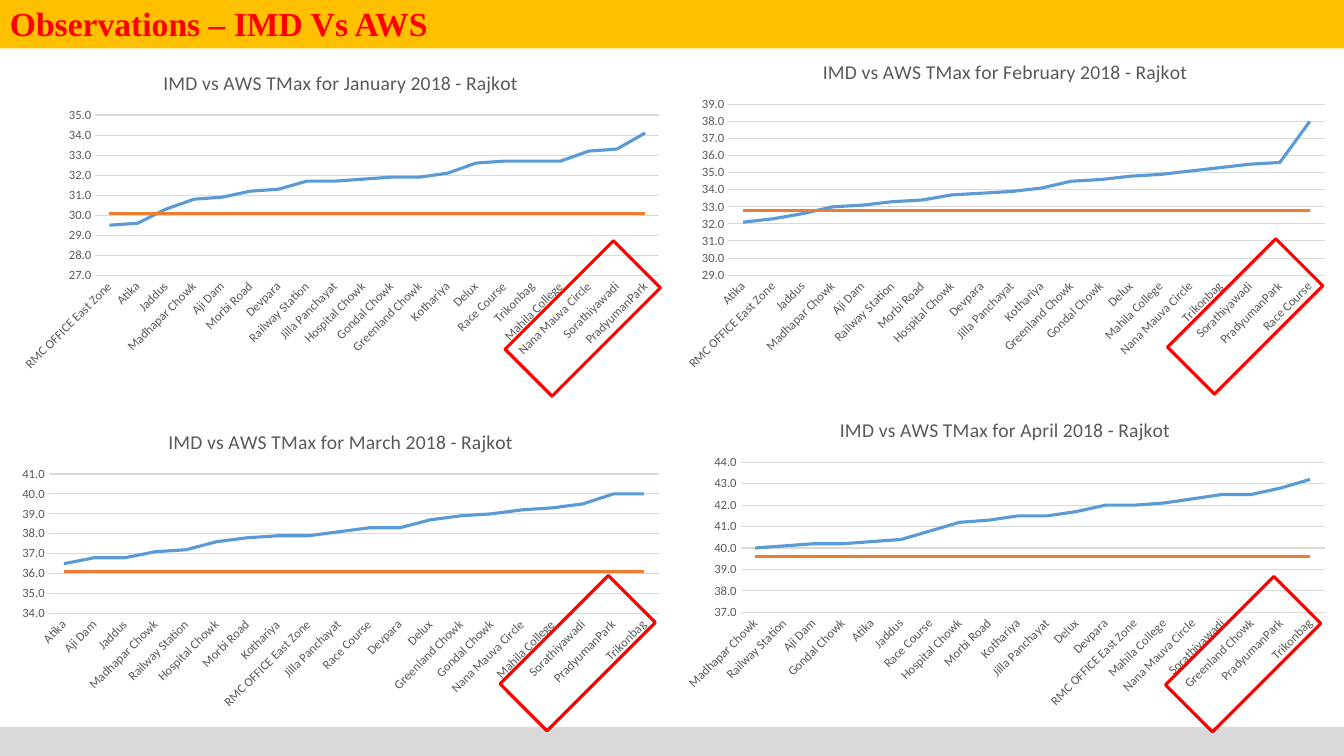
from dataclasses import dataclass

from pptx import Presentation
from pptx.chart.data import CategoryChartData
from pptx.dml.color import RGBColor
from pptx.enum.chart import XL_CHART_TYPE, XL_TICK_MARK
from pptx.enum.shapes import MSO_SHAPE
from pptx.enum.text import MSO_ANCHOR
from pptx.shapes.autoshape import Shape
from pptx.slide import Slide
from pptx.util import Inches, Pt

AMBER = RGBColor(0xFF, 0xC0, 0x00)
RED = RGBColor(0xFF, 0x00, 0x00)
LIGHT_GREY = RGBColor(0xD9, 0xD9, 0xD9)
DARK_GREY = RGBColor(0x59, 0x59, 0x59)
BLUE = RGBColor(0x5B, 0x9B, 0xD5)
ORANGE = RGBColor(0xED, 0x7D, 0x31)
WIDTH, HEIGHT = 13.33, 7.5
Box = tuple[float, float, float, float]


@dataclass
class MonthChart:
    month: str
    box: Box
    axis: tuple[int, int]
    imd: float
    aws: dict[str, float]
    highlight: tuple[float, float]


MONTHS = [
    MonthChart("January", (0.09, 0.53, 6.58, 3.22), (27, 35), 30.1, {
        "RMC OFFICE East Zone": 29.5, "Atika": 29.6, "Jaddus": 30.3,
        "Madhapar Chowk": 30.8, "Aji Dam": 30.9, "Morbi Road": 31.2,
        "Devpara": 31.3, "Railway Station": 31.7, "Jilla Panchayat": 31.7,
        "Hospital Chowk": 31.8, "Gondal Chowk": 31.9, "Greenland Chowk": 31.9,
        "Kothariya": 32.1, "Delux": 32.6, "Race Course": 32.7,
        "Trikonbag": 32.7, "Mahila College": 32.7, "Nana Mauva Circle": 33.2,
        "Sorathiyawadi": 33.3, "PradyumanPark": 34.1}, (5.45, 2.4)),
    MonthChart("February", (6.67, 0.42, 6.6, 3.33), (29, 39), 32.8, {
        "Atika": 32.1, "RMC OFFICE East Zone": 32.3, "Jaddus": 32.6,
        "Madhapar Chowk": 33.0, "Aji Dam": 33.1, "Railway Station": 33.3,
        "Morbi Road": 33.4, "Hospital Chowk": 33.7, "Devpara": 33.8,
        "Jilla Panchayat": 33.9, "Kothariya": 34.1, "Greenland Chowk": 34.5,
        "Gondal Chowk": 34.6, "Delux": 34.8, "Mahila College": 34.9,
        "Nana Mauva Circle": 35.1, "Trikonbag": 35.3, "Sorathiyawadi": 35.5,
        "PradyumanPark": 35.6, "Race Course": 38.0}, (12.02, 2.38)),
    MonthChart("March", (0.09, 4.1, 6.58, 3), (34, 41), 36.1, {
        "Atika": 36.5, "Aji Dam": 36.8, "Jaddus": 36.8,
        "Madhapar Chowk": 37.1, "Railway Station": 37.2, "Hospital Chowk": 37.6,
        "Morbi Road": 37.8, "Kothariya": 37.9, "RMC OFFICE East Zone": 37.9,
        "Jilla Panchayat": 38.1, "Race Course": 38.3, "Devpara": 38.3,
        "Delux": 38.7, "Greenland Chowk": 38.9, "Gondal Chowk": 39.0,
        "Nana Mauva Circle": 39.2, "Mahila College": 39.3,
        "Sorathiyawadi": 39.5, "PradyumanPark": 40.0, "Trikonbag": 40.0},
        (5.4, 5.72)),
    MonthChart("April", (6.67, 3.98, 6.6, 3.11), (37, 44), 39.6, {
        "Madhapar Chowk": 40.0, "Railway Station": 40.1, "Aji Dam": 40.2,
        "Gondal Chowk": 40.2, "Atika": 40.3, "Jaddus": 40.4,
        "Race Course": 40.8, "Hospital Chowk": 41.2, "Morbi Road": 41.3,
        "Kothariya": 41.5, "Jilla Panchayat": 41.5, "Delux": 41.7,
        "Devpara": 42.0, "RMC OFFICE East Zone": 42.0, "Mahila College": 42.1,
        "Nana Mauva Circle": 42.3, "Sorathiyawadi": 42.5,
        "Greenland Chowk": 42.5, "PradyumanPark": 42.8, "Trikonbag": 43.2},
        (12, 5.73)),
]


def add_rect(s: Slide, box: Box) -> Shape:
    sp = s.shapes.add_shape(MSO_SHAPE.RECTANGLE, *map(Inches, box))
    sp.shadow.inherit = False
    return sp


def add_band(s: Slide, box: Box, color: RGBColor) -> Shape:
    sp = add_rect(s, box)
    sp.fill.solid()
    sp.fill.fore_color.rgb = color
    sp.line.fill.background()
    return sp


def add_title(s: Slide) -> None:
    box = s.shapes.add_textbox(0, 0, Inches(WIDTH), Inches(0.48))
    box.fill.solid()
    box.fill.fore_color.rgb = AMBER
    tf = box.text_frame
    tf.word_wrap = True
    tf.vertical_anchor = MSO_ANCHOR.BOTTOM
    tf.text = "Observations – IMD Vs AWS"
    p = tf.paragraphs[0]
    p.line_spacing = 0.9
    font = p.runs[0].font
    font.name, font.size, font.bold = "Times New Roman", Pt(24), True
    font.color.rgb = RED


def add_month_chart(s: Slide, month: MonthChart) -> None:
    data = CategoryChartData(number_format="0.0")
    data.categories = list(month.aws)
    data.add_series("Series 1", list(month.aws.values()))
    data.add_series("Series 2", [month.imd] * len(month.aws))
    chart = s.shapes.add_chart(
        XL_CHART_TYPE.LINE, *map(Inches, month.box), data).chart
    chart.font.name, chart.font.size = "Calibri", Pt(10)
    chart.has_legend = False
    chart.has_title = True
    tf = chart.chart_title.text_frame
    tf.text = f"IMD vs AWS TMax for {month.month} 2018 - Rajkot"
    font = tf.paragraphs[0].runs[0].font
    font.name, font.size, font.bold = "Calibri", Pt(14), False
    font.color.rgb = DARK_GREY

    stations, degrees = chart.category_axis, chart.value_axis
    for axis in (stations, degrees):
        axis.major_tick_mark = axis.minor_tick_mark = XL_TICK_MARK.NONE
        font = axis.tick_labels.font
        font.name, font.size = "Calibri", Pt(9)
        font.color.rgb = DARK_GREY
    degrees.minimum_scale, degrees.maximum_scale = month.axis
    degrees.major_unit = 1
    degrees.tick_labels.number_format = "0.0"
    degrees.tick_labels.number_format_is_linked = False
    degrees.format.line.fill.background()
    for line in (stations.format.line, degrees.major_gridlines.format.line):
        line.color.rgb = LIGHT_GREY
        line.width = Pt(0.75)
    stations._element.txPr.bodyPr.set("rot", "-2700000")

    chart.plots[0].vary_by_categories = False
    for series, color in zip(chart.plots[0].series, (BLUE, ORANGE)):
        series.smooth = False
        series.format.line.color.rgb = color
        series.format.line.width = Pt(2.25)


def add_highlight(s: Slide, left: float, top: float) -> None:
    """Frame the hottest stations with a slanted red outline."""
    sp = add_rect(s, (left, top, 0.66, 1.52))
    sp.rotation = 45
    sp.fill.background()
    sp.line.color.rgb = RED
    sp.line.width = Pt(2.25)


def main() -> None:
    prs = Presentation()
    prs.slide_width, prs.slide_height = Inches(WIDTH), Inches(HEIGHT)
    s = prs.slides.add_slide(prs.slide_layouts[6])
    add_title(s)
    add_band(s, (0, 7.21, WIDTH, 0.29), LIGHT_GREY)
    for month in MONTHS:
        add_month_chart(s, month)
    for month in MONTHS:
        add_highlight(s, *month.highlight)
    prs.save("out.pptx")


if __name__ == "__main__":
    main()
